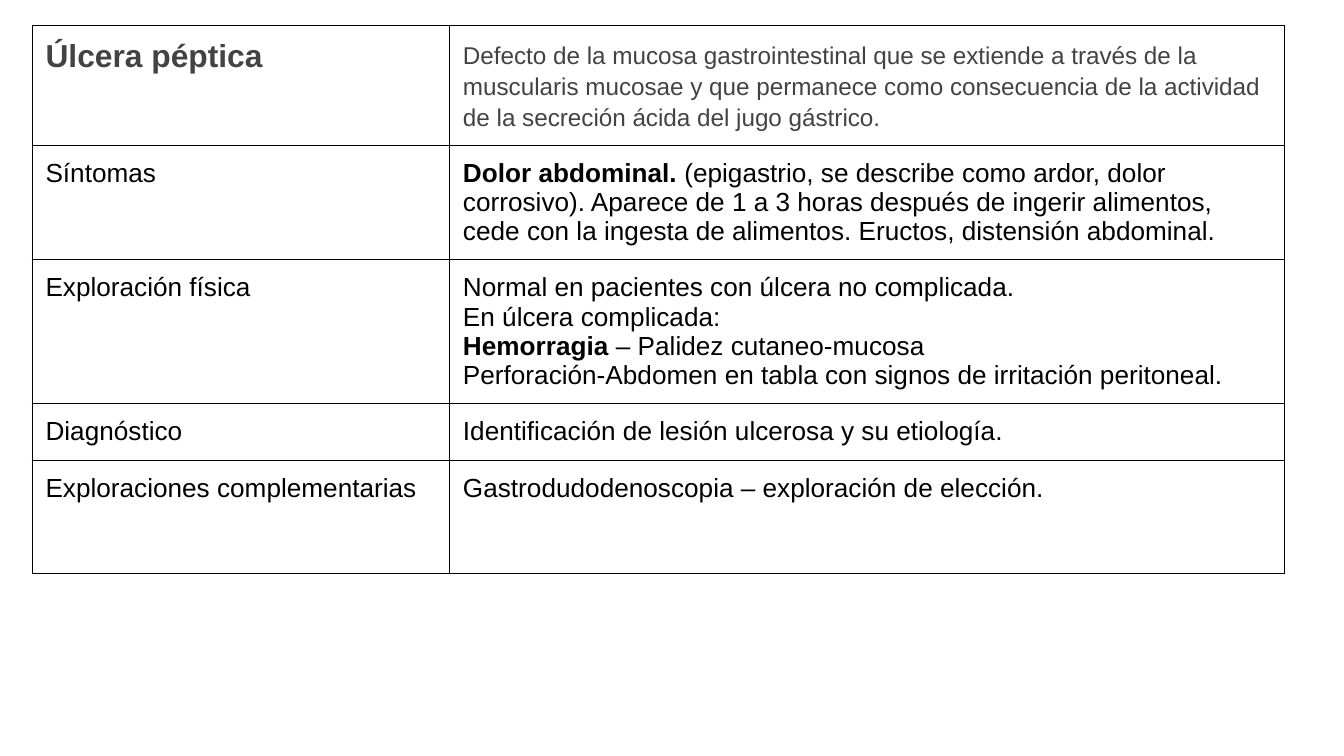
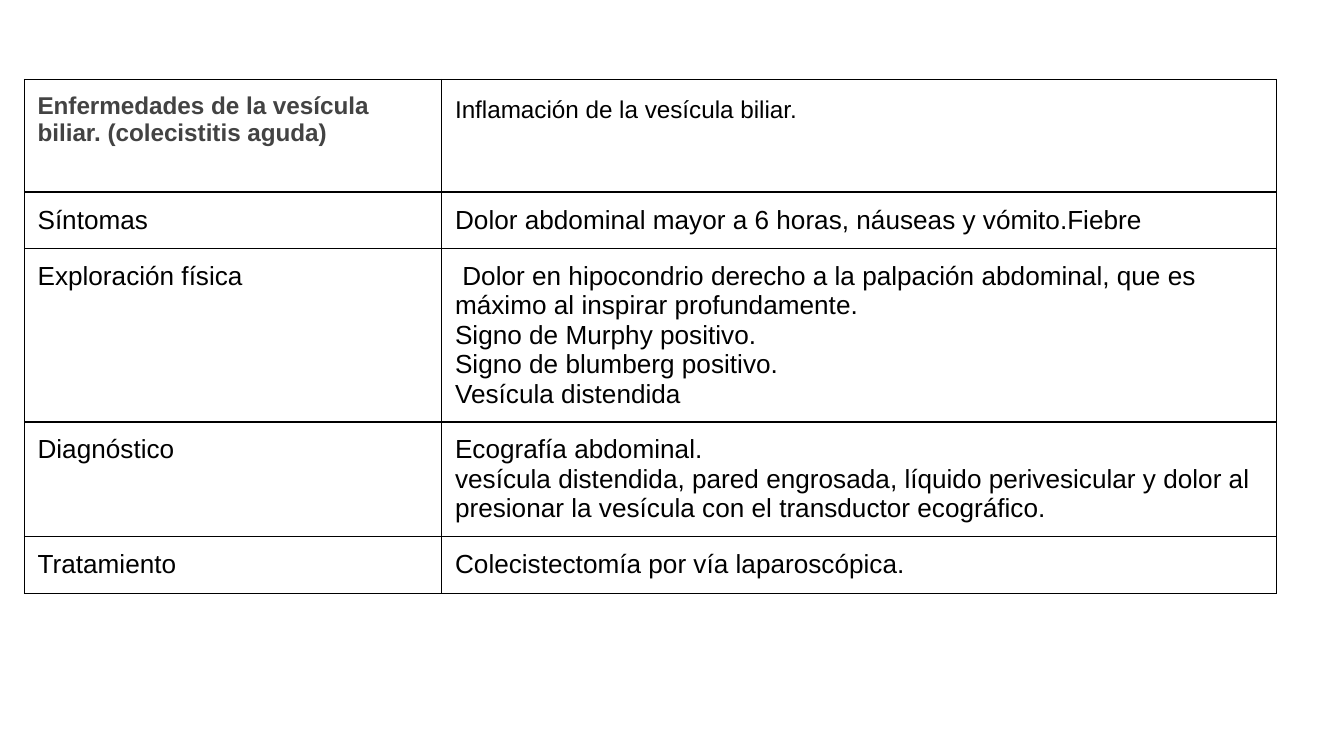
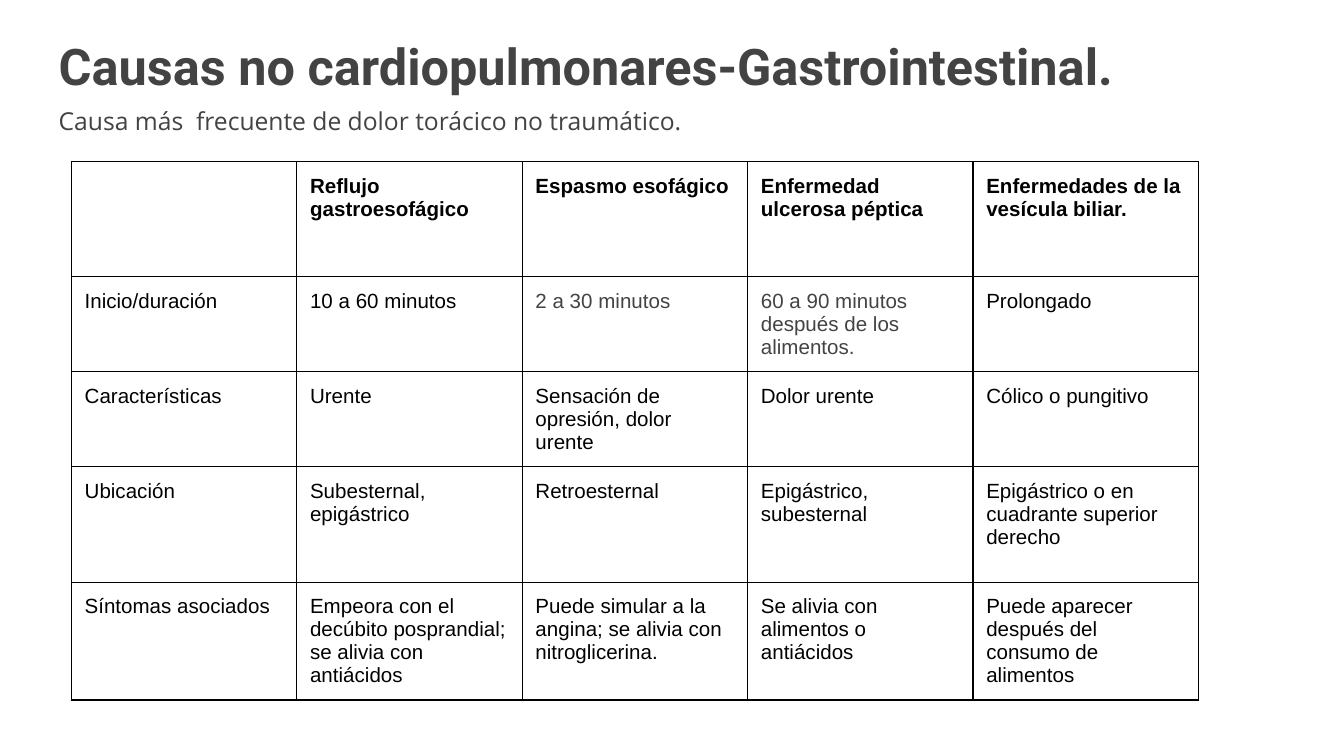
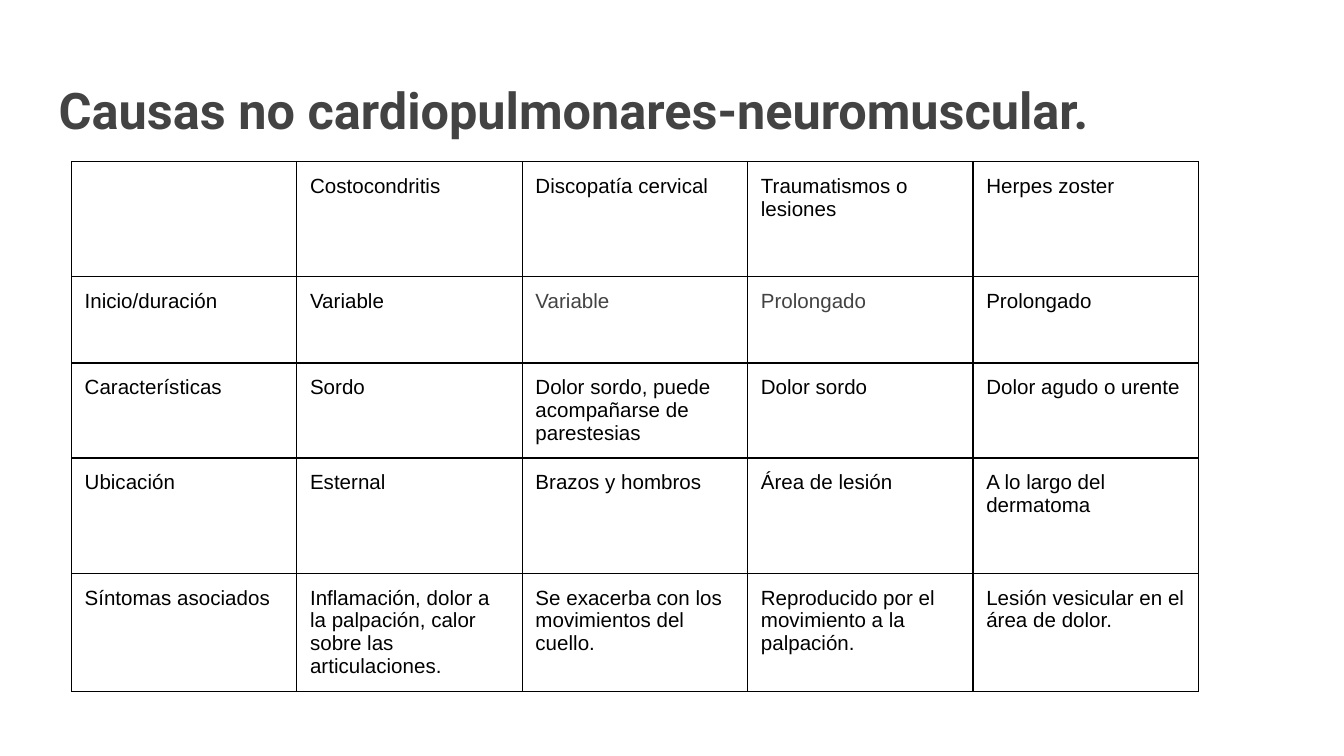
import pptx
import pptx.dml.color
import pptx.enum.text
import pptx.oxml
import pptx.oxml.ns
import pptx.util
from pptx.util import Cm

GREY, BLACK = "434343", "000000"
INSET = Cm(0.25)
TITLE_ONLY, BLANK = 5, 6

# Content: ** switches bold on and off, a line break starts a paragraph
DISEASES = [
    {
        "at": (0.61, 0.48),
        "name": "Úlcera péptica",
        "name_size": 17,
        "definition": "Defecto de la mucosa gastrointestinal que se extiende a través de la "
                      "muscularis mucosae y que permanece como consecuencia de la actividad "
                      "de la secreción ácida del jugo gástrico.",
        "definition_color": GREY,
        "facts": [
            ("Síntomas",
             "**Dolor abdominal. **(epigastrio, se describe como ardor, dolor corrosivo). "
             "Aparece de 1 a 3 horas después de ingerir alimentos, cede con la ingesta de "
             "alimentos. Eructos, distensión abdominal."),
            ("Exploración física",
             "Normal en pacientes con úlcera no complicada.\n"
             "En úlcera complicada:\n"
             "**Hemorragia** – Palidez cutaneo-mucosa\n"
             "Perforación-Abdomen en tabla con signos de irritación peritoneal."),
            ("Diagnóstico", "Identificación de lesión ulcerosa y su etiología."),
            ("Exploraciones complementarias",
             "Gastrodudodenoscopia – exploración de elección."),
        ],
        "last_fact_rows": 2,
    },
    {
        "at": (0.46, 1.5),
        "name": "Enfermedades de la vesícula biliar. (colecistitis aguda)",
        "name_size": 13,
        "definition": "Inflamación de la vesícula biliar.",
        "definition_color": BLACK,
        "facts": [
            ("Síntomas", "Dolor abdominal mayor a 6 horas, náuseas y vómito.Fiebre"),
            ("Exploración física",
             " Dolor en hipocondrio derecho a la palpación abdominal, que es máximo al "
             "inspirar profundamente.\n"
             "Signo de Murphy positivo.\n"
             "Signo de blumberg positivo.\n"
             "Vesícula distendida"),
            ("Diagnóstico",
             "Ecografía abdominal.\n"
             "vesícula distendida, pared engrosada, líquido perivesicular y dolor al "
             "presionar la vesícula con el transductor ecográfico."),
            ("Tratamiento", "Colecistectomía por vía laparoscópica."),
        ],
        "last_fact_rows": 1,
    },
]

COMPARISONS = [
    {
        "title": "Causas no cardiopulmonares-Gastrointestinal.",
        "title_top": 0.41,
        "subtitle": "Causa más  frecuente de dolor torácico no traumático.",
        "bold_header": True,
        "rows": [
            ("", "Reflujo gastroesofágico", "Espasmo esofágico",
             "Enfermedad ulcerosa péptica", "Enfermedades de la vesícula biliar."),
            ("Inicio/duración", "10 a 60 minutos", "2 a 30 minutos",
             "60 a 90 minutos después de los alimentos.", "Prolongado"),
            ("Características", "Urente", "Sensación de opresión, dolor urente",
             "Dolor urente", "Cólico o pungitivo"),
            ("Ubicación", "Subesternal, epigástrico", "Retroesternal",
             "Epigástrico, subesternal", "Epigástrico o en cuadrante superior derecho"),
            ("Síntomas asociados",
             "Empeora con el decúbito posprandial; se alivia con antiácidos",
             "Puede simular a la angina; se alivia con nitroglicerina.",
             "Se alivia con alimentos o antiácidos",
             "Puede aparecer después del consumo de alimentos"),
        ],
    },
    {
        "title": "Causas no cardiopulmonares-neuromuscular.",
        "title_top": 1.24,
        "subtitle": None,
        "bold_header": False,
        "rows": [
            ("", "Costocondritis", "Discopatía cervical", "Traumatismos o lesiones",
             "Herpes zoster"),
            ("Inicio/duración", "Variable", "Variable", "Prolongado", "Prolongado"),
            ("Características", "Sordo", "Dolor sordo, puede acompañarse de parestesias",
             "Dolor sordo", "Dolor agudo o urente"),
            ("Ubicación", "Esternal", "Brazos y hombros", "Área de lesión",
             "A lo largo del dermatoma"),
            ("Síntomas asociados",
             "Inflamación, dolor a la palpación, calor sobre las articulaciones.",
             "Se exacerba con los movimientos del cuello.",
             "Reproducido por el movimiento a la palpación.",
             "Lesión vesicular en el área de dolor."),
        ],
    },
]
GREY_CELLS = {(1, 2), (1, 3)}

# Table measures in cm
DISEASE_COLUMNS = [7.89] * 3
NAME_ROW, FACT_ROW = 2.13, 1.07
COMPARISON_AT = (1.35, 3.05)
COMPARISON_COLUMNS = [4.26] * 5
COMPARISON_ROWS = [2.18, 1.63, 1.04, 2.18, 1.63]


def rgb(color):
    return pptx.dml.color.RGBColor.from_string(color)


def write(frame, text, size=14, font="Arial", color=BLACK, bold=False,
          spacing=None, after=None):
    frame.word_wrap = True
    for index, line in enumerate(text.split("\n")):
        paragraph = frame.add_paragraph() if index else frame.paragraphs[0]
        paragraph.alignment = pptx.enum.text.PP_ALIGN.LEFT
        if spacing:
            paragraph.line_spacing = spacing
        if after:
            paragraph.space_after = pptx.util.Pt(after)
        for part, words in enumerate(line.split("**")):
            if not words:
                continue
            run = paragraph.add_run()
            run.text = words
            run.font.size = pptx.util.Pt(size)
            run.font.name = font
            run.font.bold = bold or part % 2 == 1
            run.font.color.rgb = rgb(color)


def set_insets(holder):
    holder.margin_left = holder.margin_right = INSET
    holder.margin_top = holder.margin_bottom = INSET


def add_borders(cell):
    properties = cell._tc.get_or_add_tcPr()
    for position, side in enumerate(("lnL", "lnR", "lnT", "lnB")):
        properties.insert(position, pptx.oxml.parse_xml(
            f'<a:{side} {pptx.oxml.ns.nsdecls("a")} w="9525">'
            f'<a:solidFill><a:srgbClr val="{BLACK}"/></a:solidFill></a:{side}>'))


def add_grid(slide, at, columns, rows):
    left, top = at
    grid = slide.shapes.add_table(len(rows), len(columns), Cm(left), Cm(top),
                                  Cm(sum(columns)), Cm(sum(rows))).table
    grid.first_row = grid.horz_banding = False
    for column, width in zip(grid.columns, columns):
        column.width = Cm(width)
    for row, height in zip(grid.rows, rows):
        row.height = Cm(height)
    for cell in grid.iter_cells():
        set_insets(cell)
        cell.fill.background()
        add_borders(cell)
    return grid


def add_disease(deck, disease):
    slide = deck.slides.add_slide(deck.slide_layouts[BLANK])
    facts = disease["facts"]
    fact_rows = len(facts) - 1 + disease["last_fact_rows"]
    grid = add_grid(slide, disease["at"], DISEASE_COLUMNS,
                    [NAME_ROW] + [FACT_ROW] * fact_rows)

    # Answers span two columns; the last fact may span several rows
    for row in range(len(facts) + 1):
        last = fact_rows if row == len(facts) else row
        if last > row:
            grid.cell(row, 0).merge(grid.cell(last, 0))
        grid.cell(row, 1).merge(grid.cell(last, 2))

    write(grid.cell(0, 0).text_frame, disease["name"], size=disease["name_size"],
          color=GREY, bold=True)
    write(grid.cell(0, 1).text_frame, disease["definition"], size=13,
          color=disease["definition_color"], spacing=1.15)
    for row, (label, answer) in enumerate(facts, start=1):
        write(grid.cell(row, 0).text_frame, label)
        write(grid.cell(row, 1).text_frame, answer)


def place_heading(box, top, height, text, **style):
    box.left, box.top, box.width, box.height = Cm(0.86), Cm(top), Cm(23.67), Cm(height)
    frame = box.text_frame
    set_insets(frame)
    frame.auto_size = pptx.enum.text.MSO_AUTO_SIZE.NONE
    frame.vertical_anchor = pptx.enum.text.MSO_ANCHOR.TOP
    write(frame, text, color=GREY, **style)


def add_comparison(deck, comparison):
    slide = deck.slides.add_slide(deck.slide_layouts[TITLE_ONLY])
    place_heading(slide.shapes.title, comparison["title_top"], 1.6, comparison["title"],
                  size=27, font="Roboto", bold=True)
    if comparison["subtitle"]:
        subtitle = slide.shapes.add_textbox(0, 0, 0, 0)
        place_heading(subtitle, 1.8, 1.45, comparison["subtitle"], size=13.2,
                      font="Open Sans", spacing=0.95, after=12)

    grid = add_grid(slide, COMPARISON_AT, COMPARISON_COLUMNS, COMPARISON_ROWS)
    for row, texts in enumerate(comparison["rows"]):
        for column, text in enumerate(texts):
            write(grid.cell(row, column).text_frame, text, size=11,
                  color=GREY if (row, column) in GREY_CELLS else BLACK,
                  bold=comparison["bold_header"] and row == 0)


def main():
    deck = pptx.Presentation()
    deck.slide_width, deck.slide_height = Cm(25.4), Cm(14.29)
    for disease in DISEASES:
        add_disease(deck, disease)
    for comparison in COMPARISONS:
        add_comparison(deck, comparison)
    deck.save("out.pptx")


if __name__ == "__main__":
    main()
